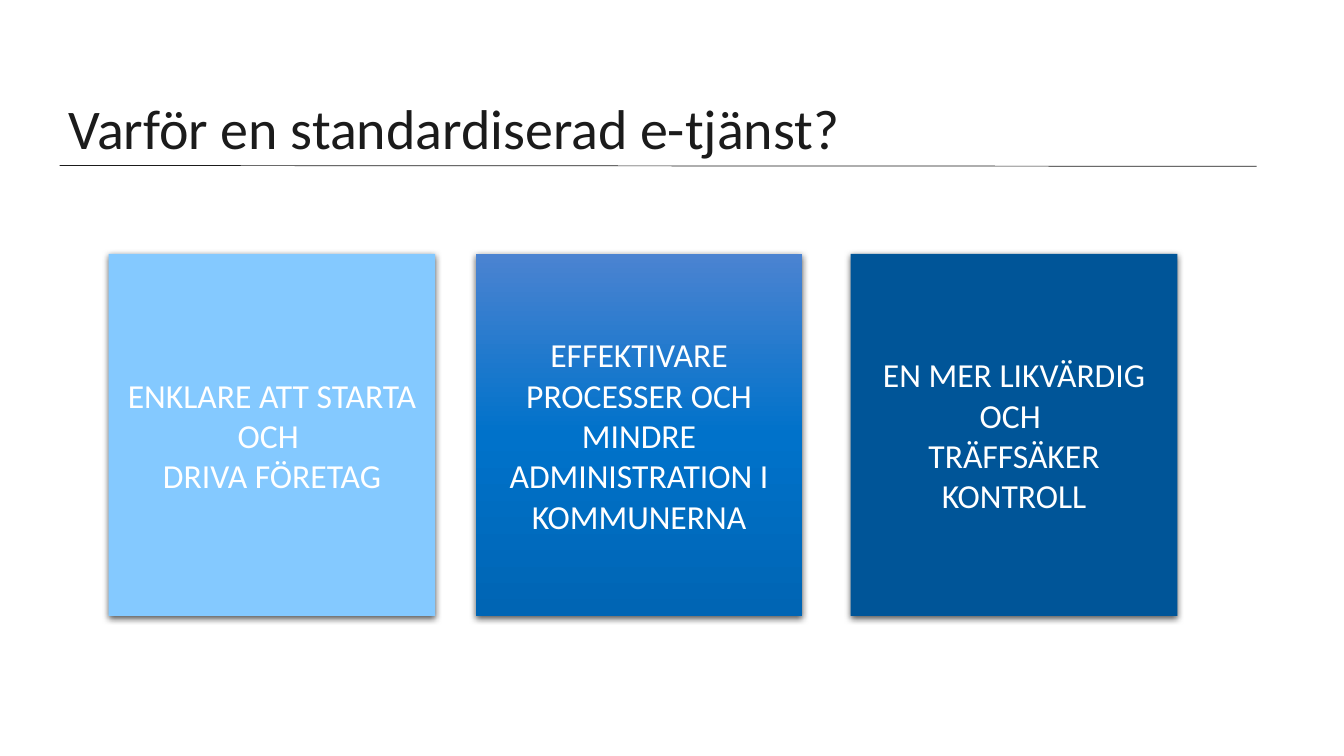
"""Build a slide with three reasons for a standardised e-service."""
import copy

import lxml.etree
import pptx
import pptx.dml.color
import pptx.enum.shapes
import pptx.enum.text
import pptx.oxml.ns
import pptx.util

Cm = pptx.util.Cm
Pt = pptx.util.Pt
RGBColor = pptx.dml.color.RGBColor
qn = pptx.oxml.ns.qn

INK = RGBColor(0x1B, 0x1B, 0x1B)
WHITE = RGBColor(0xFF, 0xFF, 0xFF)
SKY = RGBColor(0x84, 0xC9, 0xFF)
NAVY = RGBColor(0x00, 0x55, 0x98)
BLUE_TOP = RGBColor(0x4B, 0x83, 0xD1)
BLUE_MIDDLE = RGBColor(0x00, 0x72, 0xCA)
BLUE_BOTTOM = RGBColor(0x00, 0x65, 0xB4)

SHADOW = {"blurRad": Pt(4.5), "dist": Pt(1.5), "dir": 5400000, "rotWithShape": 0}
CARDS = [
    (2.74, [SKY], "ENKLARE ATT STARTA OCH \vDRIVA FÖRETAG"),
    (11.99, [BLUE_TOP, BLUE_MIDDLE, BLUE_BOTTOM],
     "EFFEKTIVARE PROCESSER OCH MINDRE ADMINISTRATION I KOMMUNERNA"),
    (21.44, [NAVY], "EN MER LIKVÄRDIG OCH \vTRÄFFSÄKER KONTROLL"),
]


def write_text(frame, text, size, color, alignment, frame_format):
    for name, value in frame_format.items():
        setattr(frame, name, value)
    para = frame.paragraphs[0]
    para.text = text
    para.alignment = alignment
    for span in para.runs:
        for name, value in {"name": "Calibri", "size": Pt(size)}.items():
            setattr(span.font, name, value)
        span.font.color.rgb = color
    return para


deck = pptx.Presentation()
deck.slide_width = Cm(33.87)
deck.slide_height = Cm(19.05)
page = deck.slides.add_slide(deck.slide_layouts[6])

title_box = page.shapes.add_textbox(Cm(1.73), Cm(1.02), Cm(30.38), Cm(3.05))
title_format = {
    "word_wrap": True,
    "vertical_anchor": pptx.enum.text.MSO_ANCHOR.BOTTOM,
    "margin_left": 0, "margin_right": 0, "margin_top": 0, "margin_bottom": 0,
}
title = write_text(title_box.text_frame, "Varför en standardiserad e-tjänst?", 40, INK,
                   pptx.enum.text.PP_ALIGN.LEFT, title_format)
title.line_spacing = 0.9

card_format = {"word_wrap": True, "vertical_anchor": pptx.enum.text.MSO_ANCHOR.MIDDLE}
for left, colors, text in CARDS:
    card = page.shapes.add_shape(pptx.enum.shapes.MSO_SHAPE.RECTANGLE,
                                 Cm(left), Cm(6.4), Cm(8.23), Cm(9.12))
    card.line.fill.background()
    if len(colors) == 1:
        card.fill.solid()
        card.fill.fore_color.rgb = colors[0]
    else:
        card.fill.gradient()
        card.fill.gradient_angle = 270
        stop_list = card._element.spPr.find(".//" + qn("a:gsLst"))
        stop_list.append(copy.deepcopy(stop_list[0]))
        for index, (stop, color) in enumerate(zip(card.fill.gradient_stops, colors)):
            stop.color.rgb = color
            stop.position = index / (len(colors) - 1)
    card.shadow.inherit = False
    effects = card._element.spPr.find(qn("a:effectLst"))
    shadow = lxml.etree.SubElement(effects, qn("a:outerShdw"))
    for name, value in SHADOW.items():
        shadow.set(name, str(int(value)))
    shade = lxml.etree.SubElement(shadow, qn("a:srgbClr"), val="000000")
    lxml.etree.SubElement(shade, qn("a:alpha"), val="63000")
    write_text(card.text_frame, text, 24, WHITE, pptx.enum.text.PP_ALIGN.CENTER, card_format)

rule = page.shapes.add_connector(pptx.enum.shapes.MSO_CONNECTOR.STRAIGHT,
                                 Cm(1.5), Cm(4.17), Cm(31.67), Cm(4.19))
rule.line.color.rgb = INK
rule.line.width = Pt(0.5)
lxml.etree.SubElement(rule._element.spPr, qn("a:effectLst"))

deck.save("out.pptx")
